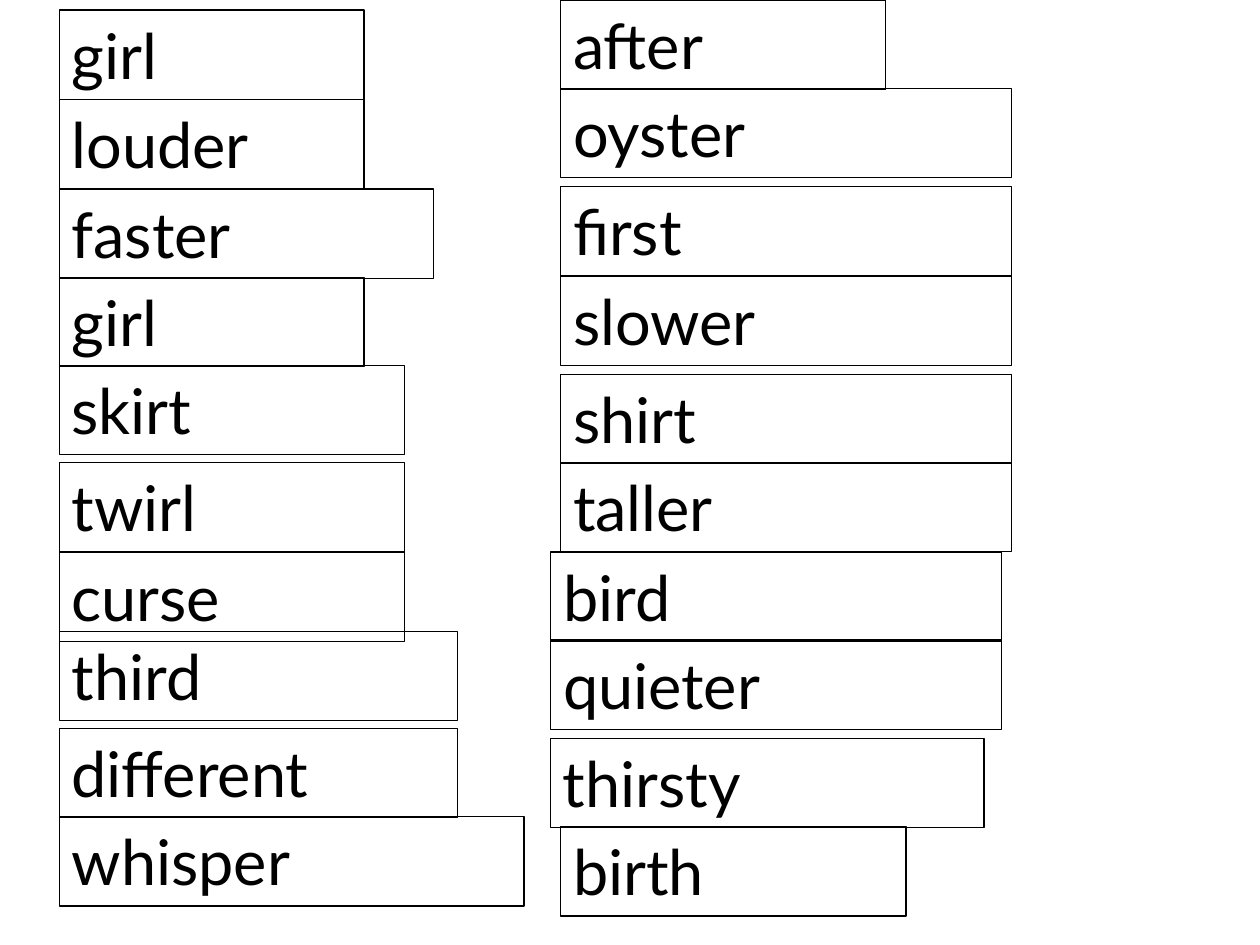
from dataclasses import dataclass

from pptx import Presentation
from pptx.dml.color import RGBColor
from pptx.enum.text import MSO_ANCHOR, MSO_AUTO_SIZE, PP_ALIGN
from pptx.util import Inches, Pt


@dataclass(frozen=True)
class Theme:
    """Hold the colours, font and sizes of the word cards."""

    ink: RGBColor = RGBColor(0, 0, 0)
    font: str = "Lato"
    word_size: Pt = Pt(36)
    border_width: Pt = Pt(0.75)
    card_height: float = 0.71


class CardSlide:
    """Draw word cards on one slide in one style."""

    def __init__(self, slide, theme):
        """Keep the slide and its theme."""
        self.slide = slide
        self.theme = theme

    def add_card(self, word, left, top, width):
        """Add one outlined card with a word."""
        theme = self.theme
        card = self.slide.shapes.add_textbox(
            Inches(left), Inches(top), Inches(width), Inches(theme.card_height)
        )
        card.line.color.rgb = theme.ink
        card.line.width = theme.border_width
        text_frame = card.text_frame
        text_frame.word_wrap = True
        text_frame.auto_size = MSO_AUTO_SIZE.SHAPE_TO_FIT_TEXT
        text_frame.vertical_anchor = MSO_ANCHOR.TOP
        paragraph = text_frame.paragraphs[0]
        paragraph.alignment = PP_ALIGN.LEFT
        run = paragraph.add_run()
        run.text = word
        run.font.name = theme.font
        run.font.size = theme.word_size
        run.font.color.rgb = theme.ink

    def add_column(self, left, cards):
        """Add a column of cards given as word, top and width."""
        for word, top, width in cards:
            self.add_card(word, left, top, width)


LEFT_CARDS = [
    ("girl", 0.08, 2.42),
    ("louder", 0.79, 2.42),
    ("faster", 1.5, 2.97),
    ("girl", 2.2, 2.42),
    ("skirt", 2.9, 2.74),
    ("twirl", 3.67, 2.74),
    ("curse", 4.38, 2.74),
    ("third", 5.01, 3.16),
    ("different", 5.78, 3.16),
    ("whisper", 6.48, 3.69),
]
RIGHT_CARDS = [
    ("after", 0, 2.58),
    ("oyster", 0.7, 3.58),
    ("first", 1.48, 3.58),
    ("slower", 2.19, 3.58),
    ("shirt", 2.97, 3.58),
    ("taller", 3.67, 3.58),
    ("birth", 6.56, 2.74),
]
SHIFTED_CARDS = [
    ("bird", 4.38, 3.58),
    ("quieter", 5.08, 3.58),
    ("thirsty", 5.86, 3.44),
]


def main():
    """Build and save the word card slide."""
    presentation = Presentation()
    presentation.slide_width = Inches(10)
    presentation.slide_height = Inches(7.5)
    slide = presentation.slides.add_slide(presentation.slide_layouts[6])
    card_slide = CardSlide(slide, Theme())
    card_slide.add_column(0.47, LEFT_CARDS)
    card_slide.add_column(4.45, RIGHT_CARDS)
    card_slide.add_column(4.37, SHIFTED_CARDS)
    presentation.save("out.pptx")


if __name__ == "__main__":
    main()
